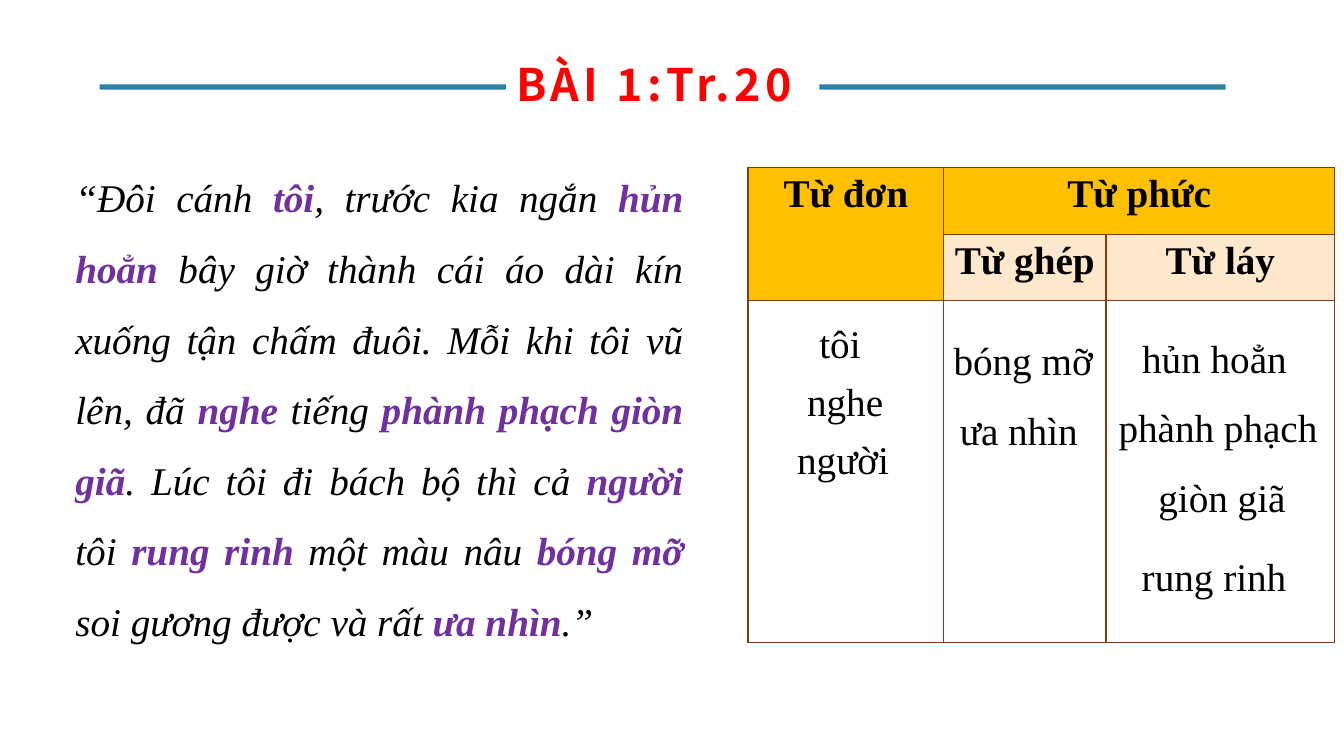
from lxml import etree
from pptx import Presentation
from pptx.dml.color import RGBColor
from pptx.enum import shapes, text
from pptx.oxml import ns
from pptx.util import Cm, Pt

PASSAGE = (
    "“Đôi cánh *tôi*, trước kia ngắn *hủn hoẳn* bây giờ thành cái áo dài kín xuống "
    "tận chấm đuôi. Mỗi khi tôi vũ lên, đã *nghe* tiếng *phành phạch giòn giã*. "
    "Lúc tôi đi bách bộ thì cả *người* tôi *rung rinh* một màu nâu *bóng mỡ* soi "
    "gương được và rất *ưa nhìn*.”"
)
COLUMNS = (4.93, 4.09, 5.77)
ROWS = (1.68, 1.68, 8.61)
GOLD, PEACH, WHITE = "FFC000", "FFE8CC", "FFFFFF"
CELLS = (
    (("Từ đơn", GOLD), ("Từ phức", GOLD), ("", GOLD)),
    (("", GOLD), ("Từ ghép", PEACH), ("Từ láy", PEACH)),
    (("", WHITE), ("", WHITE), ("", WHITE)),
)
MERGES = (((0, 0), (1, 0)), ((0, 1), (0, 2)))
JUSTIFY, CENTER = text.PP_ALIGN.JUSTIFY, text.PP_ALIGN.CENTER
ANSWERS = (
    ("tôi", 20.4, 7.34, 1.93, JUSTIFY),
    ("nghe", 20.09, 8.79, 2.82, JUSTIFY),
    ("người", 19.84, 10.26, 3.07, JUSTIFY),
    ("bóng mỡ", 23.5, 7.75, 4.57, CENTER),
    ("ưa nhìn", 23.39, 9.53, 4.57, CENTER),
    ("hủn hoẳn", 28.32, 7.7, 4.57, CENTER),
    ("phành phạch", 27.71, 9.45, 5.97, CENTER),
    ("giòn giã", 27.81, 11.2, 5.97, CENTER),
    ("rung rinh", 27.61, 13.21, 5.97, CENTER),
)


def rgb(value):
    return RGBColor.from_string(value)


class Lesson:
    font, size, ink = "Times New Roman", 28, "000000"
    accent, bar_fill, border = "7030A0", "2B80A5", "843C0B"

    def __init__(self, prs):
        self.s = prs.slides.add_slide(prs.slide_layouts[5])

    def style(self, font, name=font, size=size, color=ink):
        font.name, font.size = name, Pt(size)
        font.color.rgb = rgb(color)

    def title(self, words, x, y, w, h):
        sp = self.s.shapes.title
        sp.left, sp.top, sp.width, sp.height = Cm(x), Cm(y), Cm(w), Cm(h)
        tf = sp.text_frame
        tf.text = words
        tf.auto_size = text.MSO_AUTO_SIZE.NONE
        tf.vertical_anchor = text.MSO_ANCHOR.MIDDLE
        tf.margin_left = tf.margin_right = tf.margin_top = tf.margin_bottom = 0
        p = tf.paragraphs[0]
        p.alignment = CENTER
        r = p.runs[0]
        self.style(r.font, "Noto Sans CJK SC", 32, "FF0000")
        r.font.bold = True
        r.font._element.set("spc", "300")

    def bar(self, x, y, w, h):
        sp = self.s.shapes.add_shape(
            shapes.MSO_SHAPE.RECTANGLE, Cm(x), Cm(y), Cm(w), Cm(h))
        sp.shadow.inherit = False
        sp.fill.solid()
        sp.fill.fore_color.rgb = rgb(self.bar_fill)
        sp.line.fill.background()

    def text(self, words, x, y, w, h=1.83, align=JUSTIFY, italic=None):
        """Add a text box; words between asterisks are bold and accented."""
        tf = self.s.shapes.add_textbox(Cm(x), Cm(y), Cm(w), Cm(h)).text_frame
        tf.word_wrap = True
        p = tf.paragraphs[0]
        p.alignment, p.line_spacing = align, 1.5
        self.style(p.font)
        p.font.italic = italic
        for i, part in enumerate(words.split("*")):
            r = p.add_run()
            r.text = part
            if i % 2:
                r.font.bold = True
                r.font.color.rgb = rgb(self.accent)

    def cell(self, cell, words, fill):
        cell.fill.solid()
        cell.fill.fore_color.rgb = rgb(fill)
        tc_pr = cell._tc.get_or_add_tcPr()
        for i, side in enumerate(("lnL", "lnR", "lnT", "lnB")):
            ln = etree.Element(ns.qn(f"a:{side}"), w=str(Pt(1)))
            solid = etree.SubElement(ln, ns.qn("a:solidFill"))
            etree.SubElement(solid, ns.qn("a:srgbClr"), val=self.border)
            tc_pr.insert(i, ln)
        if words:
            cell.text = words
            p = cell.text_frame.paragraphs[0]
            p.alignment = CENTER
            self.style(p.font)
            p.font.bold = True

    def table(self, x, y):
        table = self.s.shapes.add_table(
            len(ROWS), len(COLUMNS), Cm(x), Cm(y),
            Cm(sum(COLUMNS)), Cm(sum(ROWS))).table
        for column, width in zip(table.columns, COLUMNS):
            column.width = Cm(width)
        for row, height, contents in zip(table.rows, ROWS, CELLS):
            row.height = Cm(height)
            for cell, (words, fill) in zip(row.cells, contents):
                self.cell(cell, words, fill)
        for first, last in MERGES:
            table.cell(*first).merge(table.cell(*last))


def main():
    prs = Presentation()
    prs.slide_width, prs.slide_height = Cm(33.87), Cm(19.05)
    lesson = Lesson(prs)
    lesson.title("BÀI 1:Tr.20", 12.32, 1.42, 8.33, 1.37)
    for x in (2.51, 20.65):
        lesson.bar(x, 2.13, 10.24, 0.13)
    lesson.text(PASSAGE, 1.65, 3.66, 15.82, 12.6, italic=True)
    lesson.table(18.85, 4.22)
    for words, x, y, w, align in ANSWERS:
        lesson.text(words, x, y, w, align=align)
    prs.save("out.pptx")


if __name__ == "__main__":
    main()
